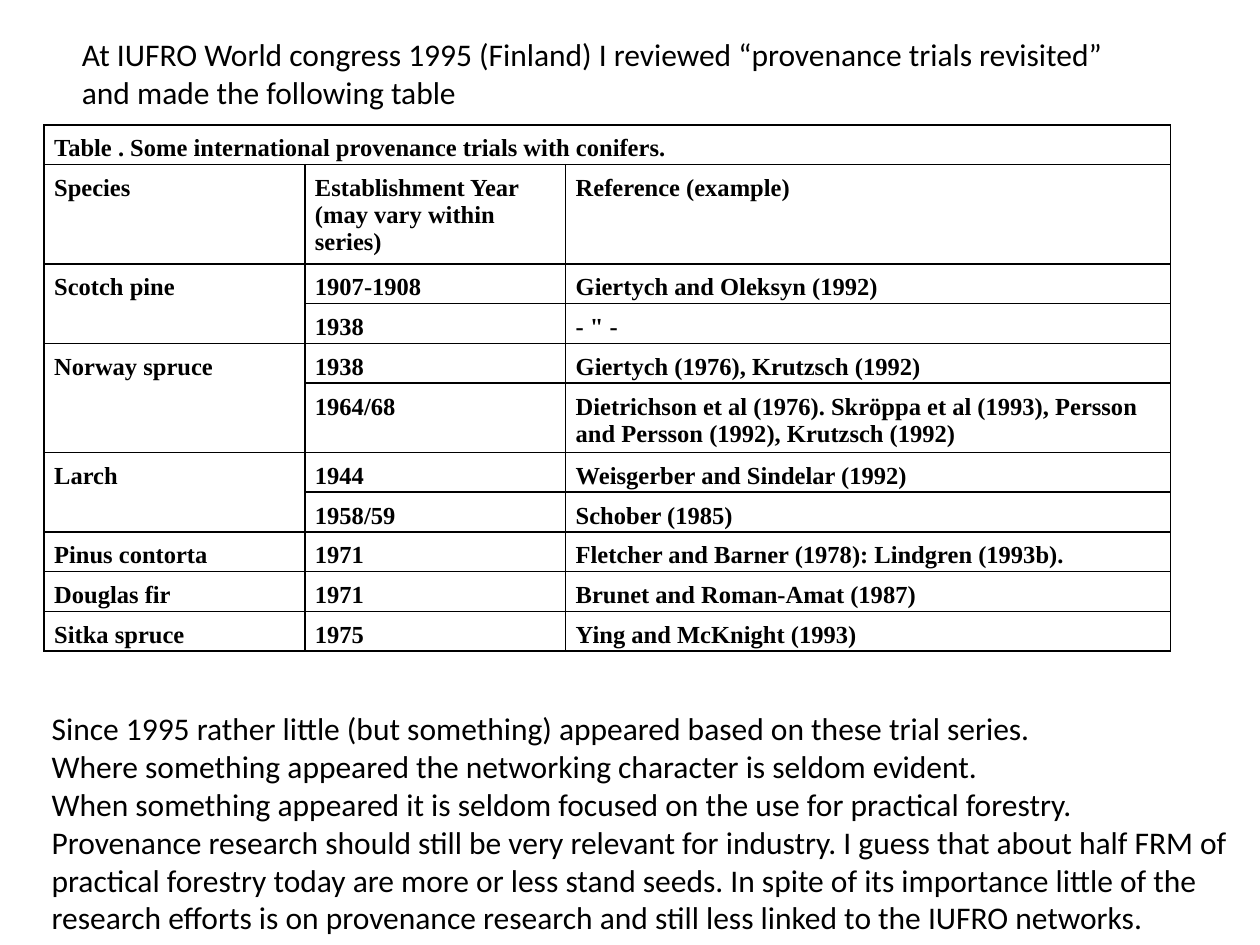
"""Build the slide on provenance trials with conifers."""
from lxml import etree
from pptx import Presentation
from pptx.dml.color import RGBColor
from pptx.enum.text import MSO_ANCHOR, MSO_AUTO_SIZE, PP_ALIGN
from pptx.oxml.ns import qn
from pptx.util import Inches, Pt

LEFT = PP_ALIGN.LEFT
TOP = MSO_ANCHOR.TOP
GROW = MSO_AUTO_SIZE.SHAPE_TO_FIT_TEXT
BLACK = "000000"
INTRO = ("At IUFRO World congress 1995 (Finland) I reviewed “provenance trials revisited” "
         "and made the following table")
NOTES = "\n".join([
    "Since 1995 rather little (but something) appeared based on these trial series.",
    "Where something appeared the networking character is seldom evident.",
    "When something appeared it is seldom focused on the use for practical forestry.",
    "Provenance research should still be very relevant for industry. I guess that about half "
    "FRM of practical forestry today are more or less stand seeds. In spite of its importance "
    "little of the research efforts is on provenance research and still less linked to the "
    "IUFRO networks.",
])
TRIALS = [
    ("Table . Some international provenance trials with conifers.", "", ""),
    ("Species", "Establishment Year\n(may vary within series)", "Reference (example)"),
    ("Scotch pine", "1907-1908", "Giertych and Oleksyn (1992)"),
    ("", "1938", '- " -'),
    ("Norway spruce", "1938", "Giertych (1976), Krutzsch (1992)"),
    ("", "1964/68", "Dietrichson et al (1976). Skröppa et al (1993), "
                    "Persson and Persson (1992), Krutzsch (1992)"),
    ("Larch", "1944", "Weisgerber and Sindelar (1992)"),
    ("", "1958/59", "Schober (1985)"),
    ("Pinus contorta", "1971", "Fletcher and Barner (1978): Lindgren (1993b)."),
    ("Douglas fir", "1971", "Brunet and Roman-Amat (1987)"),
    ("Sitka spruce", "1975", "Ying and McKnight (1993)"),
]
WIDTHS = [2.07, 2.07, 4.8]
HEIGHT = 4.18
TALL = {1: 0.79, 5: 0.55}


def color(code):
    """Turn a hex string into a colour."""
    return RGBColor.from_string(code)


def write(frame, text, size=18, font="Calibri", bold=False, ink=BLACK):
    """Fill a text frame with one plain paragraph per line of text."""
    frame.text = text
    for para in frame.paragraphs:
        para.alignment = LEFT
        para.space_before = para.space_after = Pt(0)
        props = para._p.get_or_add_pPr()
        props.set("marL", "0")
        props.set("indent", "0")
        etree.SubElement(props, qn("a:buNone"))
        for run in para.runs:
            run.font.size = Pt(size)
            run.font.name = font
            run.font.bold = bold
            run.font.color.rgb = color(ink)
        if not para.runs:
            end = etree.SubElement(para._p, qn("a:endParaRPr"))
            end.set("sz", str(size * 100))


def place(shape, text, left, top, width, height):
    """Move a placeholder and set its text."""
    shape.left, shape.top = Inches(left), Inches(top)
    shape.width, shape.height = Inches(width), Inches(height)
    frame = shape.text_frame
    frame.word_wrap = True
    frame.vertical_anchor = TOP
    write(frame, text)
    frame.auto_size = GROW


def border(cell, hidden=""):
    """Draw the cell's sides, except those named as hidden."""
    props = cell._tc.get_or_add_tcPr()
    for place_no, side in enumerate("LRTB"):
        line = etree.Element(qn(f"a:ln{side}"), w=str(Pt(1)))
        if side in hidden:
            etree.SubElement(line, qn("a:noFill"))
        else:
            fill = etree.SubElement(line, qn("a:solidFill"))
            etree.SubElement(fill, qn("a:srgbClr"), val=BLACK)
        props.insert(place_no, line)


def open_sides(row, col):
    """Name the sides left open where a species covers two rows."""
    if col or row < 2:
        return ""
    below = TRIALS[row + 1][0] if row + 1 < len(TRIALS) else "end"
    return ("" if TRIALS[row][0] else "T") + ("" if below else "B")


def add_trials(slide):
    """Add the table of trials."""
    frame = slide.shapes.add_table(len(TRIALS), len(WIDTHS), Inches(0.35), Inches(0.99),
                                   Inches(sum(WIDTHS)), Inches(HEIGHT))
    table = frame.table
    table.first_row = table.horz_banding = False
    for col, width in zip(table.columns, WIDTHS):
        col.width = Inches(width)
    short = (HEIGHT - sum(TALL.values())) / (len(TRIALS) - len(TALL))
    for row, texts in enumerate(TRIALS):
        table.rows[row].height = Inches(TALL.get(row, short))
        for col, text in enumerate(texts):
            cell = table.cell(row, col)
            cell.margin_left = cell.margin_right = cell.margin_top = Inches(0.08)
            cell.margin_bottom = 0
            cell.fill.background()
            write(cell.text_frame, text, size=14, font="Times New Roman", bold=True)
            border(cell, open_sides(row, col))
    table.cell(0, 0).merge(table.cell(0, len(WIDTHS) - 1))


def main():
    """Build and save the slide."""
    deck = Presentation()
    deck.slide_width, deck.slide_height = Inches(10), Inches(7.5)
    slide = deck.slides.add_slide(deck.slide_layouts[1])
    title, body = slide.placeholders
    add_trials(slide)
    place(title, INTRO, 0.55, 0.23, 8.67, 0.71)
    place(body, NOTES, 0.31, 5.58, 9.69, 1.92)
    deck.save("out.pptx")


if __name__ == "__main__":
    main()
